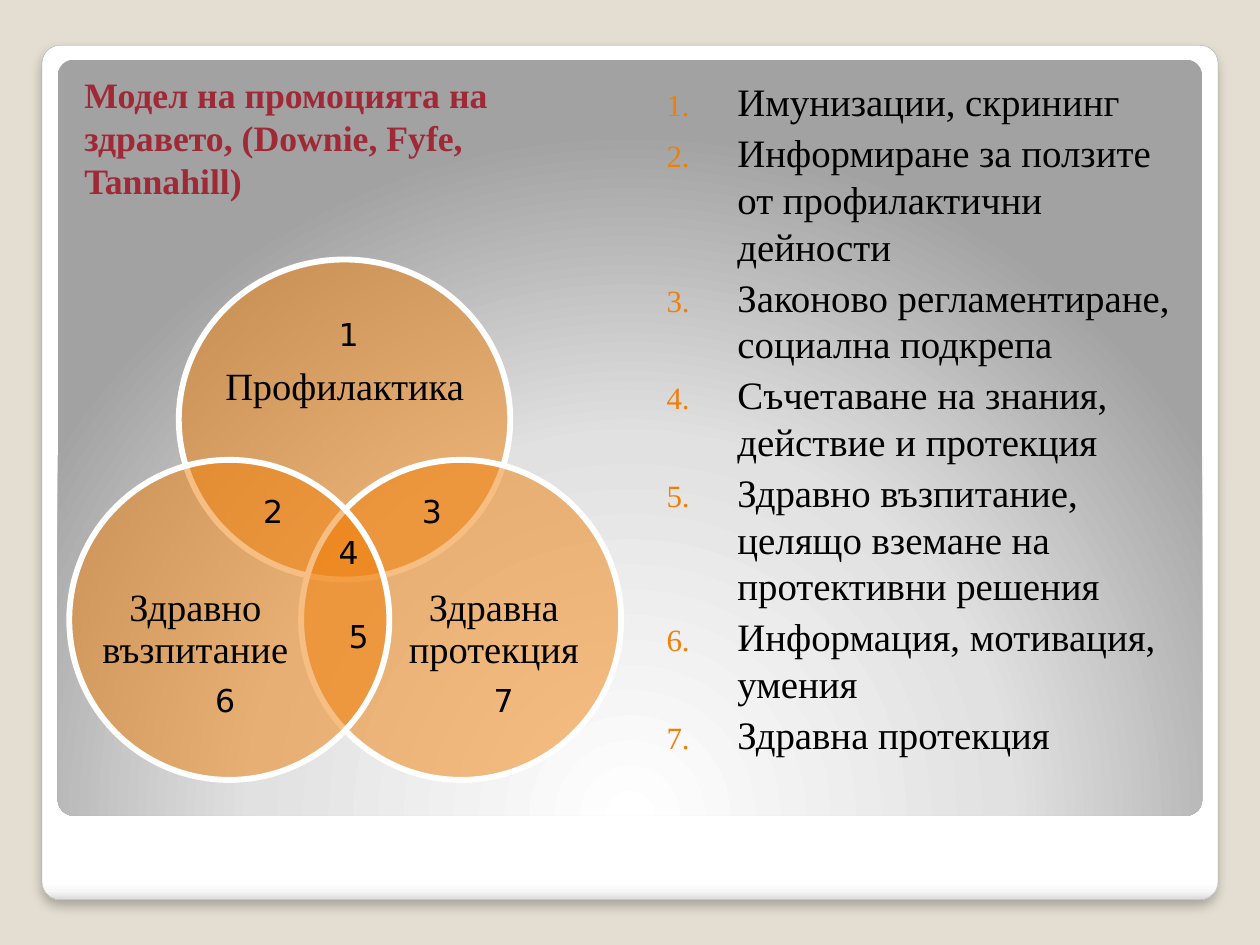
from lxml import etree
from pptx import Presentation
from pptx.dml.color import RGBColor
from pptx.enum import shapes, text
from pptx.oxml import parse_xml
from pptx.oxml.ns import qn
from pptx.util import Pt

SAND = RGBColor(0xE3, 0xDE, 0xD1)
EDGE = RGBColor(0xA4, 0xA4, 0xA4)
WHITE = RGBColor(0xFF, 0xFF, 0xFF)
BLACK = RGBColor(0, 0, 0)
ORANGE = RGBColor(0xF0, 0x7F, 0x09)
RED = RGBColor(0x9F, 0x29, 0x36)
SERIF = "Times New Roman"
SANS = "DejaVu Sans"
DRAWING = "http://schemas.openxmlformats.org/drawingml/2006/main"

PANEL_STOPS = [(0, "FFFFFF"), (98, "FFFFFF"), (99, "F7F7F7"), (100, "DADADA")]
GLOW_STOPS = [(0, "FFFFFF"), (55, "E1E1E1"), (100, "A2A2A2")]
DOWNWARD = '<a:lin ang="5400000" scaled="0"/>'
FROM_BOTTOM = ('<a:path path="circle"><a:fillToRect l="50000" t="175000" '
               'r="50000" b="-75000"/></a:path>')

TITLE = "Модел на промоцията на здравето, (Downie, Fyfe, Tannahill)"
ACTIVITIES = [
    "Имунизации, скрининг",
    "Информиране за ползите от профилактични дейности",
    "Законово регламентиране, социална подкрепа",
    "Съчетаване на знания, действие и протекция",
    "Здравно възпитание, целящо вземане на протективни решения",
    "Информация, мотивация, умения",
    "Здравна протекция",
]
# circle place, label, label place
FIELDS = [
    ((102.2, 148.3, 189.4, 182.9), "Профилактика", (127.4, 180.7, 139, 82.1)),
    ((172.1, 262.8, 182.9, 182.9), "Здравна протекция", (227.5, 309.6, 109.4, 100.8)),
    ((39.6, 262.8, 182.9, 182.9), "Здравно възпитание", (56.9, 309.6, 109.4, 100.8)),
]
# left and top of the numbers 1 to 7
NUMBER_SPOTS = [(186.5, 176.4), (143.3, 277.9), (234, 277.9), (186.5, 301),
                (192.2, 349.2), (115.9, 385.9), (275, 385.9)]


def points(place):
    return [Pt(value) for value in place]


def write(para, words, font=SERIF, size=22, color=BLACK, bold=False):
    span = para.add_run()
    span.text = words
    span.font.name = font
    span.font.size = Pt(size)
    span.font.bold = bold
    span.font.color.rgb = color


def number_bullet(para, color, percent, indent):
    """Give the paragraph an automatic number with a hanging indent."""
    props = para._p.get_or_add_pPr()
    props.set("marL", str(Pt(indent)))
    props.set("indent", str(-Pt(indent)))
    tint = etree.SubElement(props, qn("a:buClr"))
    etree.SubElement(tint, qn("a:srgbClr"), val=str(color))
    etree.SubElement(props, qn("a:buSzPct"), val=str(percent * 1000))
    etree.SubElement(props, qn("a:buAutoNum"), type="arabicPeriod")


class Painter:
    def __init__(self, page):
        self.page = page

    def panel(self, place, stops, direction):
        """Draw a rounded rectangle with a gradient."""
        shape = self.page.shapes.add_shape(
            shapes.MSO_SHAPE.ROUNDED_RECTANGLE, *points(place))
        shape.adjustments[0] = 0.021
        shape.shadow.inherit = False
        shape.line.fill.background()
        marks = "".join(
            f'<a:gs pos="{spot * 1000}"><a:srgbClr val="{color}"/></a:gs>'
            for spot, color in stops)
        shape._element.spPr.insert(2, parse_xml(
            f'<a:gradFill xmlns:a="{DRAWING}" rotWithShape="1">'
            f'<a:gsLst>{marks}</a:gsLst>{direction}</a:gradFill>'))
        return shape

    def drop_shadow(self, shape):
        effects = shape._element.spPr.find(qn("a:effectLst"))
        effects.append(parse_xml(
            f'<a:outerShdw xmlns:a="{DRAWING}" blurRad="{Pt(6)}" dist="{Pt(4)}" '
            'dir="5400000" algn="t" rotWithShape="0"><a:srgbClr val="000000">'
            '<a:alpha val="25000"/></a:srgbClr></a:outerShdw>'))

    def circle(self, place):
        shape = self.page.shapes.add_shape(shapes.MSO_SHAPE.OVAL, *points(place))
        shape.shadow.inherit = False
        shape.fill.solid()
        shape.fill.fore_color.rgb = ORANGE
        tint = shape._element.spPr.find(qn("a:solidFill"))[0]
        etree.SubElement(tint, qn("a:alpha"), val="50000")
        shape.line.color.rgb = WHITE
        shape.line.width = Pt(3.35)

    def text_frame(self, place, insets=(7.2, 3.6, 7.2, 3.6), middle=False, wrap=True):
        frame = self.page.shapes.add_textbox(*points(place)).text_frame
        frame.word_wrap = wrap
        (frame.margin_left, frame.margin_top,
         frame.margin_right, frame.margin_bottom) = points(insets)
        anchor = text.MSO_ANCHOR
        frame.vertical_anchor = anchor.MIDDLE if middle else anchor.TOP
        return frame

    def title(self, place, words):
        para = self.text_frame(place, (11.5, 7.2, 7.2, 3.6), middle=True).paragraphs[0]
        para.space_before = Pt(2.5)
        write(para, words, size=20.4, color=RED, bold=True)

    def numbered_list(self, place, items):
        frame = self.text_frame(place, (14.4, 7.2, 7.2, 3.6))
        for index, item in enumerate(items):
            para = frame.add_paragraph() if index else frame.paragraphs[0]
            para.space_before = Pt(2.5)
            number_bullet(para, ORANGE, 80, 40.5)
            write(para, item, size=22.2)

    def label(self, place, words):
        para = self.text_frame(place, (0, 0, 0, 0), middle=True).paragraphs[0]
        para.alignment = text.PP_ALIGN.CENTER
        para.line_spacing = 0.9
        write(para, words)

    def number(self, left, top, value):
        frame = self.text_frame((left, top, 25.9, 28.8), wrap=False)
        frame.auto_size = text.MSO_AUTO_SIZE.SHAPE_TO_FIT_TEXT
        write(frame.paragraphs[0], str(value), font=SANS, size=18)


def main():
    deck = Presentation()
    deck.slide_width, deck.slide_height = Pt(720), Pt(540)
    page = deck.slides.add_slide(deck.slide_layouts[6])
    page.background.fill.solid()
    page.background.fill.fore_color.rgb = SAND
    painter = Painter(page)

    card = painter.panel((24, 25.9, 672, 488.2), PANEL_STOPS, DOWNWARD)
    card.line.color.rgb = EDGE
    card.line.width = Pt(0.16)
    painter.drop_shadow(card)
    painter.panel((33, 34.1, 654, 432), GLOW_STOPS, FROM_BOTTOM)

    painter.title((36.7, 45.4, 329, 62.6), TITLE)
    painter.numbered_list((366.5, 37.4, 316.8, 425.5), ACTIVITIES)
    for circle_place, words, label_place in FIELDS:
        painter.circle(circle_place)
        painter.label(label_place, words)
    for value, (left, top) in enumerate(NUMBER_SPOTS, start=1):
        painter.number(left, top, value)

    deck.save("out.pptx")


if __name__ == "__main__":
    main()
